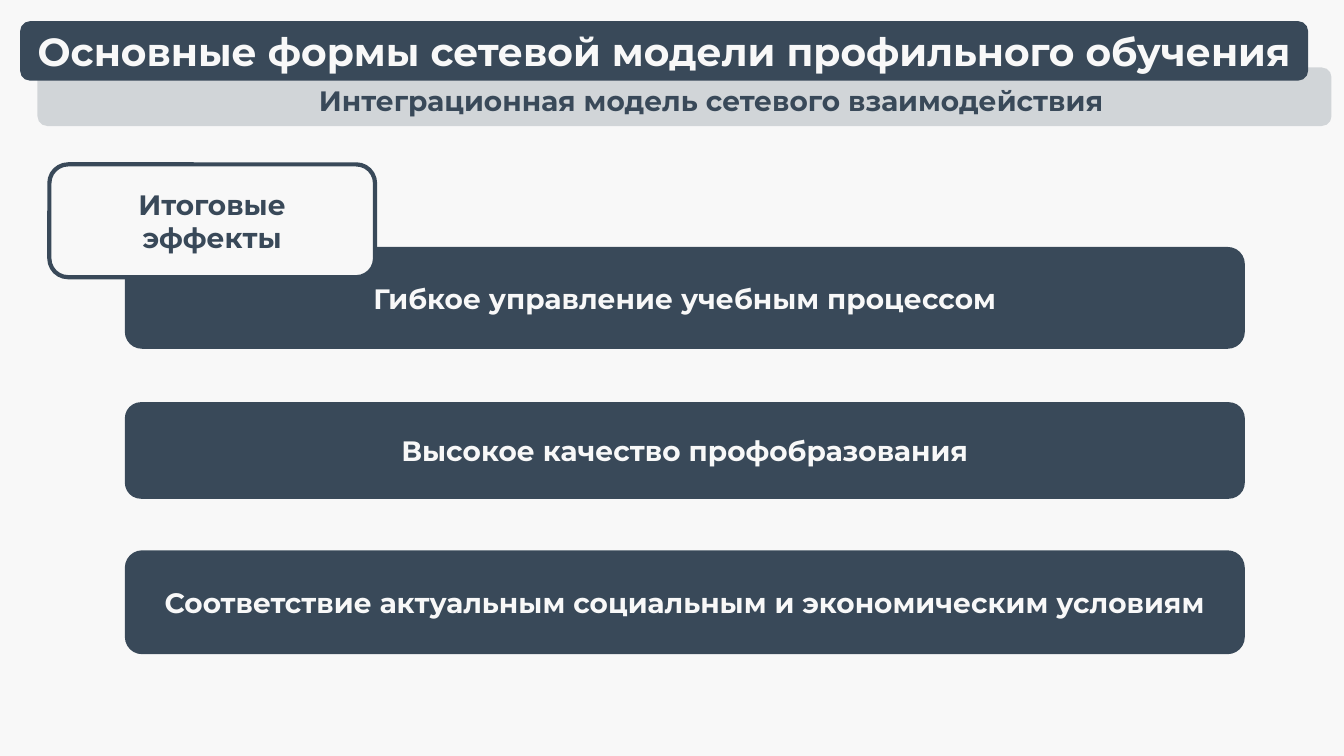
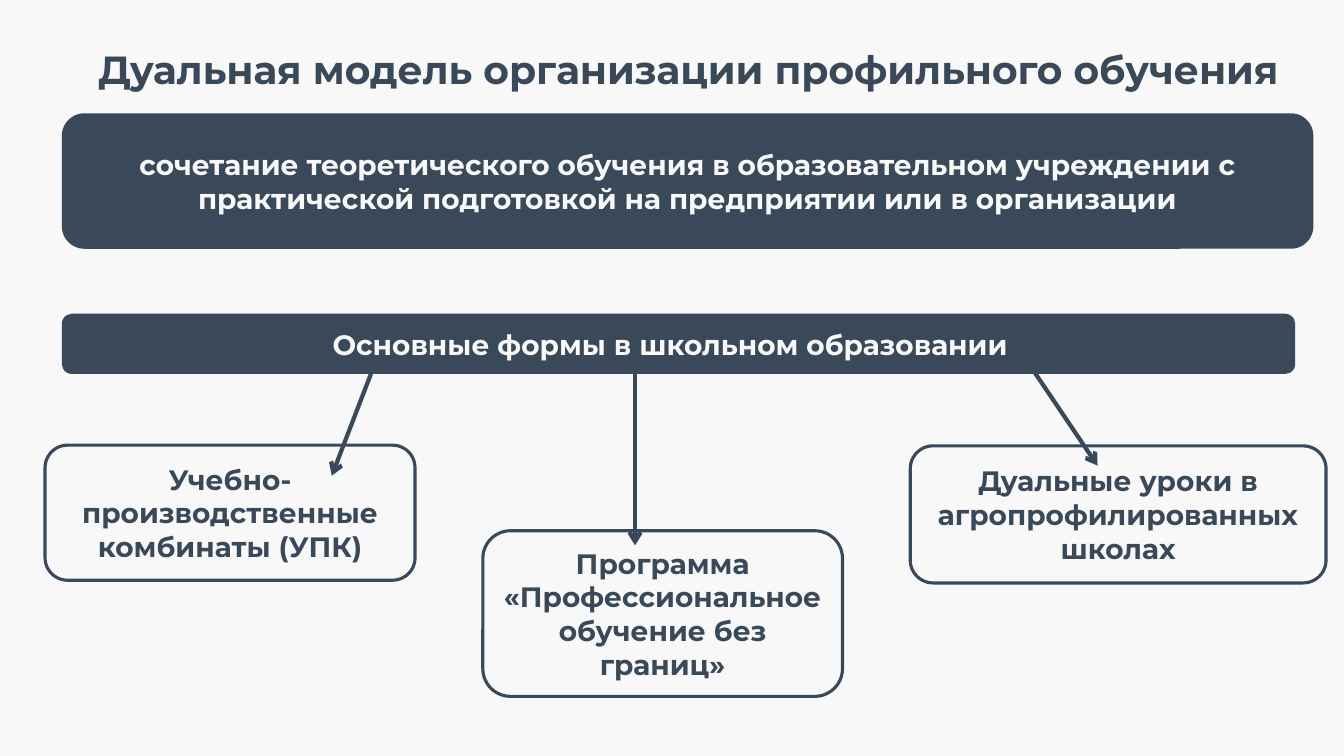
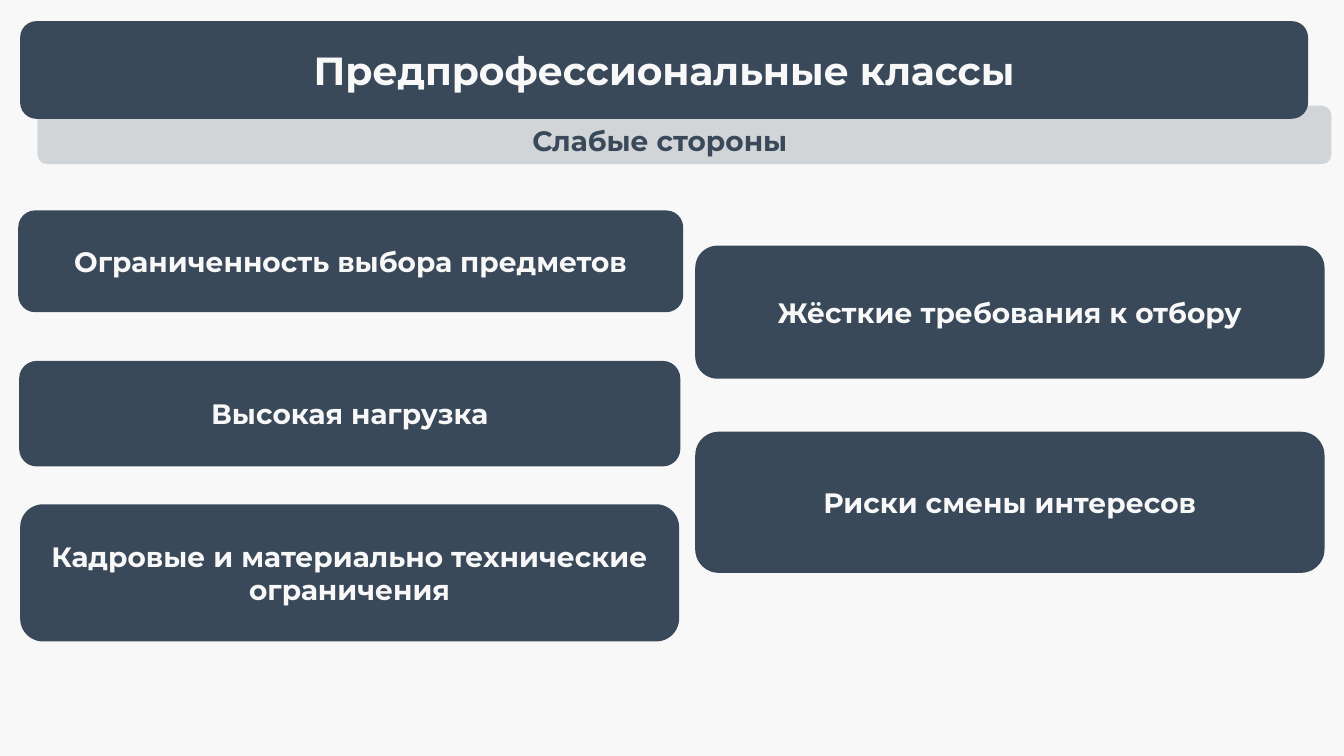
from dataclasses import dataclass

from lxml.etree import SubElement
from pptx import Presentation
from pptx.dml.color import RGBColor
from pptx.enum.shapes import MSO_CONNECTOR as Connector, MSO_SHAPE as Preset
from pptx.enum.text import MSO_ANCHOR as Anchor, PP_ALIGN as Align
from pptx.oxml.ns import qn
from pptx.util import Pt


@dataclass(frozen=True)
class Theme:
    ink: RGBColor = RGBColor(0x39, 0x49, 0x59)
    paper: RGBColor = RGBColor(0xF8, 0xF8, 0xF8)
    band_opacity: int = 20
    font: str = "Montserrat"
    title_size: float = 28
    body_size: float = 20
    inset_x: float = 7.2
    inset_y: float = 3.6
    tight_inset: float = 4
    heavy_line: float = 3
    thin_line: float = 2.25


class Deck:
    def __init__(self, theme):
        self.theme = theme
        self.prs = Presentation()
        self.prs.slide_width, self.prs.slide_height = Pt(960), Pt(540)
        backdrop = self.prs.slide_master.background.fill
        backdrop.solid()
        backdrop.fore_color.rgb = theme.paper
        self.slide = None

    def new_slide(self):
        self.slide = self.prs.slides.add_slide(self.prs.slide_layouts[6])

    def set_text(self, shape, text, color, size=None, anchor=Anchor.MIDDLE,
                 inset=None, right_inset=None):
        theme = self.theme
        left = theme.inset_x if inset is None else inset
        frame = shape.text_frame
        frame.word_wrap = True
        frame.vertical_anchor = anchor
        frame.margin_left = Pt(left)
        frame.margin_right = Pt(left if right_inset is None else right_inset)
        frame.margin_top = frame.margin_bottom = Pt(theme.inset_y)
        paragraph = frame.paragraphs[0]
        paragraph.alignment = Align.CENTER
        run = paragraph.add_run()
        run.text = text
        run.font.name = theme.font
        run.font.size = Pt(size or theme.body_size)
        run.font.bold = True
        run.font.color.rgb = color

    def panel(self, box, fill=None, line_width=None):
        shape = self.slide.shapes.add_shape(Preset.ROUNDED_RECTANGLE, *map(Pt, box))
        shape.shadow.inherit = False
        if fill is None:
            shape.fill.background()
        else:
            shape.fill.solid()
            shape.fill.fore_color.rgb = fill
        if line_width is None:
            shape.line.fill.background()
        else:
            shape.line.color.rgb = self.theme.ink
            shape.line.width = Pt(line_width)
        return shape

    def dark_card(self, box, text, **style):
        self.set_text(self.panel(box, self.theme.ink), text, self.theme.paper, **style)

    def outline_card(self, box, text, line_width, fill=None, **style):
        self.set_text(self.panel(box, fill, line_width), text, self.theme.ink, **style)

    def caption(self, box, text, **style):
        label = self.slide.shapes.add_textbox(*map(Pt, box))
        self.set_text(label, text, self.theme.ink, anchor=Anchor.TOP, **style)

    def header(self, title, height, subtitle, subtitle_box):
        top = 15.1
        band = self.panel((26.8, top + height - 9.4, 924.3, 41.8), self.theme.ink)
        color = band.element.spPr.find(qn("a:solidFill"))[0]
        SubElement(color, qn("a:alpha"), val=str(self.theme.band_opacity * 1000))
        self.caption(subtitle_box, subtitle)
        self.dark_card((14.4, top, 920, height), title,
                       size=self.theme.title_size, inset=self.theme.tight_inset)

    def arrow(self, start, end):
        link = self.slide.shapes.add_connector(
            Connector.STRAIGHT, *map(Pt, (*start, *end)))
        link.line.color.rgb = self.theme.ink
        link.line.width = Pt(self.theme.heavy_line)
        properties = link.element.spPr
        SubElement(properties.find(qn("a:ln")), qn("a:tailEnd"), type="arrow")
        SubElement(properties, qn("a:effectLst"))

    def save(self):
        self.prs.save("out.pptx")


def integration_effects(deck):
    deck.new_slide()
    deck.header("Основные формы сетевой модели профильного обучения", 42.5,
                "Интеграционная модель сетевого взаимодействия",
                (118, 56.2, 780, 31.5))
    effects = [
        (176.4, 72.7, "Гибкое управление учебным процессом"),
        (287.3, 69, "Высокое качество профобразования"),
        (393.1, 74.2, "Соответствие актуальным социальным и экономическим условиям"),
    ]
    for top, height, effect in effects:
        deck.dark_card((89.2, top, 800, height), effect)
    deck.outline_card((35.3, 117.4, 232.6, 80.6), "Итоговые эффекты",
                      deck.theme.heavy_line, deck.theme.paper, inset=20)


def dual_model(deck):
    theme = deck.theme
    deck.new_slide()
    deck.caption((56.9, 28.8, 869.8, 41), "Дуальная модель организации профильного обучения",
                 size=theme.title_size, inset=theme.tight_inset)
    deck.dark_card((44.2, 80.9, 894, 96.8),
                   "сочетание теоретического обучения в образовательном учреждении "
                   "с практической подготовкой на предприятии или в организации")
    deck.dark_card((44.2, 224.1, 881, 43), "Основные формы в школьном образовании",
                   right_inset=19)
    forms = [
        ((32.2, 318, 264.3, 96.5), "Учебно-производственные комбинаты (УПК)"),
        ((344.9, 379.1, 256.9, 118.3), "Программа «Профессиональное обучение без границ»"),
        ((650.2, 318.5, 297, 97.9), "Дуальные уроки в агропрофилированных школах"),
    ]
    for box, form in forms:
        deck.outline_card(box, form, theme.thin_line, inset=theme.tight_inset)
    for start, end in [
        ((265, 267), (237, 339.8)),
        ((453.6, 260), (453.6, 389.5)),
        ((735, 260), (784, 332.6)),
    ]:
        deck.arrow(start, end)


def weak_points(deck):
    deck.new_slide()
    deck.header("Предпрофессиональные классы", 69.8, "Слабые стороны",
                (48, 85, 846.7, 31.5))
    weaknesses = [
        ((13, 150.3, 475, 72.7), "Ограниченность выбора предметов"),
        ((13.7, 257.8, 472.3, 75.4), "Высокая нагрузка"),
        ((14.4, 360.2, 470.7, 98), "Кадровые и материально технические ограничения"),
        ((496.6, 175.5, 449.5, 95), "Жёсткие требования к отбору"),
        ((496.6, 308.4, 449.5, 100.8), "Риски смены интересов"),
    ]
    for box, weakness in weaknesses:
        deck.dark_card(box, weakness)


def main():
    deck = Deck(Theme())
    for build in (integration_effects, dual_model, weak_points):
        build(deck)
    deck.save()


if __name__ == "__main__":
    main()
